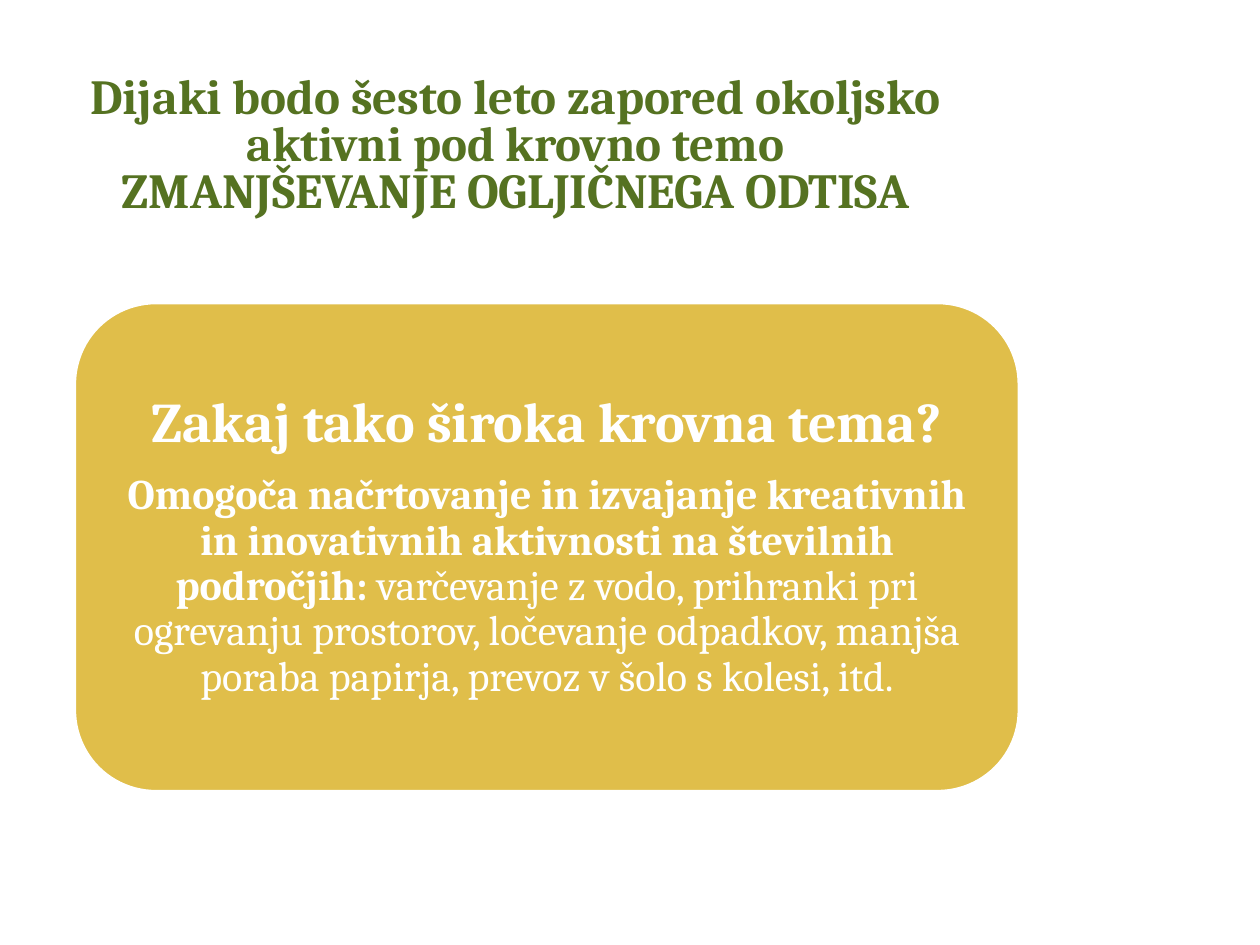
import pptx
import pptx.util
from pptx.dml.color import RGBColor
from pptx.enum.shapes import MSO_SHAPE
from pptx.enum.text import MSO_ANCHOR, MSO_AUTO_SIZE, PP_ALIGN
from pptx.util import Cm

FONT = "Cambria"
GREEN, GOLD, WHITE = "557221", "E0BE4A", "FFFFFF"

# Each paragraph: size in points, then runs of (text, bold)
TITLE = [
    (28, [("Dijaki bodo šesto leto zapored okoljsko aktivni pod krovno temo "
           "ZMANJŠEVANJE OGLJIČNEGA ODTISA", True)]),
]
THEME = [
    (32, [("Zakaj tako široka krovna tema?", True)]),
    (24, [("Omogoča načrtovanje in izvajanje kreativnih in inovativnih "
           "aktivnosti na številnih področjih: ", True),
          ("varčevanje z vodo, prihranki pri ogrevanju prostorov, ločevanje "
           "odpadkov, manjša poraba papirja, prevoz v šolo s kolesi, itd.", False)]),
]
LEFT = Cm(1.5)


def color(value):
    return RGBColor.from_string(value)


def write(frame, paragraphs, ink, line_spacing, gap=0):
    """Fill a text frame with centred paragraphs, gap points apart."""
    frame.word_wrap = True
    frame.auto_size = MSO_AUTO_SIZE.NONE
    frame.vertical_anchor = MSO_ANCHOR.MIDDLE
    for index, (size, spans) in enumerate(paragraphs):
        para = frame.add_paragraph() if index else frame.paragraphs[0]
        para.alignment = PP_ALIGN.CENTER
        para.line_spacing = line_spacing
        para.space_before = pptx.util.Pt(gap if index else 0)
        for text, bold in spans:
            span = para.add_run()
            span.text = text
            span.font.name = FONT
            span.font.size = pptx.util.Pt(size)
            span.font.bold = bold
            span.font.color.rgb = color(ink)


deck = pptx.Presentation()
deck.slide_width, deck.slide_height = Cm(25.4), Cm(19.05)
page = deck.slides.add_slide(deck.slide_layouts.get_by_name("Title Only"))

title = page.shapes.title
title.left, title.top, title.width, title.height = LEFT, Cm(1.52), Cm(17.78), Cm(2.92)
write(title.text_frame, TITLE, GREEN, 0.8)

panel = page.shapes.add_shape(
    MSO_SHAPE.ROUNDED_RECTANGLE, LEFT, Cm(6.1), Cm(19.05), Cm(9.86))
panel.shadow.inherit = False
panel.fill.solid()
panel.fill.fore_color.rgb = color(GOLD)
panel.line.color.rgb = color(WHITE)
panel.line.width = pptx.util.Pt(2)
frame = panel.text_frame
frame.margin_left = frame.margin_right = Cm(0.33)
frame.margin_top = frame.margin_bottom = Cm(0.33)
write(frame, THEME, WHITE, 0.9, gap=11)

deck.save("out.pptx")
